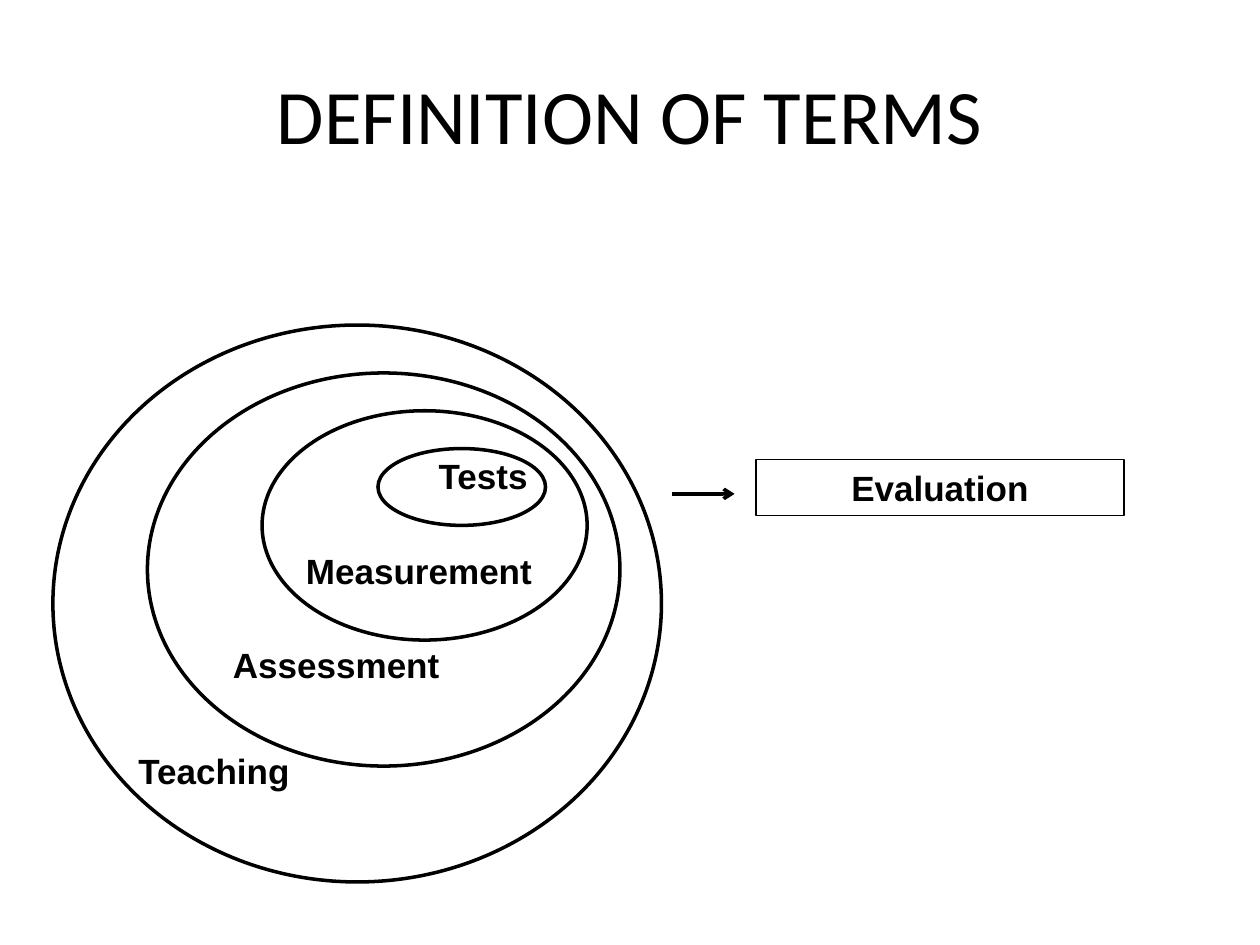
from dataclasses import dataclass

from lxml.etree import SubElement
from pptx import Presentation
from pptx.dml.color import RGBColor
from pptx.enum.shapes import MSO_CONNECTOR as Connector, MSO_SHAPE as Shape
from pptx.enum.text import MSO_ANCHOR as Anchor, PP_ALIGN as Align
from pptx.oxml.ns import qn
from pptx.util import Inches, Pt


@dataclass(frozen=True)
class Theme:
    ink: RGBColor = RGBColor(0, 0, 0)
    title_font: str = "Calibri"
    label_font: str = "Arial"
    title_size: float = 44
    label_size: float = 20
    ring_width: float = 2
    frame_width: float = 0.75


class Diagram:
    """Draws styled elements on one slide."""

    def __init__(self, slide, theme):
        self.shapes = slide.shapes
        self.theme = theme

    def add_wording(self, frame, wording, font, size, bold, align, anchor):
        frame.word_wrap = True
        frame.vertical_anchor = anchor
        line = frame.paragraphs[0]
        line.alignment = align
        run = line.add_run()
        run.text = wording
        run.font.name = font
        run.font.size = Pt(size)
        run.font.bold = bold
        run.font.color.rgb = self.theme.ink

    def title(self, wording, *box):
        heading = self.shapes.add_textbox(*map(Inches, box))
        self.add_wording(heading.text_frame, wording, self.theme.title_font,
                         self.theme.title_size, False, Align.CENTER, Anchor.MIDDLE)

    def label_text(self, frame, wording, align):
        self.add_wording(frame, wording, self.theme.label_font,
                         self.theme.label_size, True, align, Anchor.TOP)

    def label(self, wording, *box, align=Align.LEFT):
        caption = self.shapes.add_textbox(*map(Inches, box))
        self.label_text(caption.text_frame, wording, align)

    def outline(self, kind, width, box):
        figure = self.shapes.add_shape(kind, *map(Inches, box))
        figure.shadow.inherit = False
        figure.fill.background()
        figure.line.color.rgb = self.theme.ink
        figure.line.width = Pt(width)
        return figure

    def ring(self, *box):
        self.outline(Shape.OVAL, self.theme.ring_width, box)

    def framed_label(self, wording, *box):
        frame = self.outline(Shape.RECTANGLE, self.theme.frame_width, box)
        self.label_text(frame.text_frame, wording, Align.CENTER)

    def arrow(self, *ends):
        pointer = self.shapes.add_connector(Connector.STRAIGHT, *map(Inches, ends))
        pointer.line.color.rgb = self.theme.ink
        pointer.line.width = Pt(self.theme.ring_width)
        properties = pointer._element.spPr
        SubElement(properties.find(qn("a:ln")), qn("a:tailEnd"), type="arrow")
        SubElement(properties, qn("a:effectLst"))


def main():
    deck = Presentation()
    deck.slide_width, deck.slide_height = Inches(10), Inches(7.5)
    diagram = Diagram(deck.slides.add_slide(deck.slide_layouts[6]), Theme())

    diagram.title("DEFINITION OF TERMS", 0.5, 0.25, 9, 1.3)
    diagram.framed_label("Evaluation", 6, 3.65, 2.92, 0.44)

    diagram.label("Tests", 3, 3.56, 1.67, 0.44, align=Align.CENTER)
    for term, left, top, width in (
        ("Measurement", 2.33, 4.31, 2.42),
        ("Assessment", 1.75, 5.06, 2.58),
        ("Teaching", 1, 5.9, 2),
    ):
        diagram.label(term, left, top, width, 0.44)

    for ring in (
        (0.42, 2.58, 4.83, 4.42),
        (1.17, 2.96, 3.75, 3.12),
        (2.08, 3.26, 2.58, 1.82),
        (3, 3.56, 1.33, 0.61),
    ):
        diagram.ring(*ring)

    diagram.arrow(5.33, 3.92, 5.83, 3.92)
    deck.save("out.pptx")


if __name__ == "__main__":
    main()
